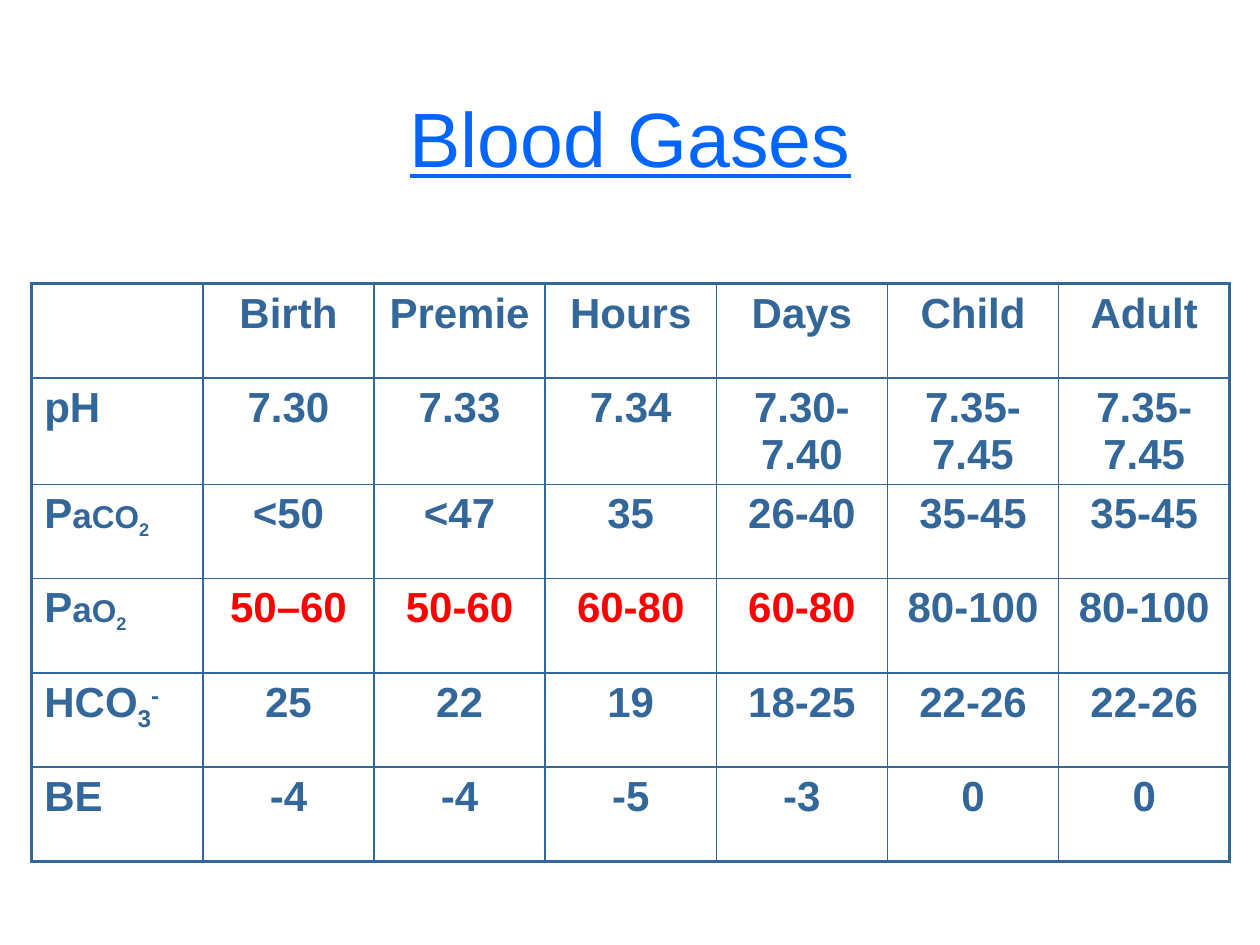
"""Builds the blood gases slide with its table of normal values by age."""
from dataclasses import dataclass

from lxml import etree
from pptx import Presentation
from pptx.dml.color import RGBColor
from pptx.enum.text import MSO_ANCHOR, PP_ALIGN
from pptx.oxml.ns import qn
from pptx.util import Cm, Pt

BOTTOM = MSO_ANCHOR.BOTTOM
CENTER, LEFT = PP_ALIGN.CENTER, PP_ALIGN.LEFT
TITLE_ONLY = 5

AGES = ["", "Birth", "Premie", "Hours", "Days", "Child", "Adult"]
GASES = [
    ([("pH", 24, 0)],
     ["7.30", "7.33", "7.34", "7.30-7.40", "7.35-7.45", "7.35-7.45"]),
    ([("P", 24, 0), ("a", 20, 0), ("CO", 18, 0), ("2", 18, -25)],
     ["<50", "<47", "35", "26-40", "35-45", "35-45"]),
    ([("P", 24, 0), ("a", 20, 0), ("O", 18, 0), ("2", 18, -25)],
     ["50–60", "50-60", "60-80", "60-80", "80-100", "80-100"]),
    ([("HCO", 24, 0), ("3", 24, -25), ("-", 24, 30)],
     ["25", "22", "19", "18-25", "22-26", "22-26"]),
    ([("BE", 24, 0)], ["-4", "-4", "-5", "-3", "0", "0"]),
]
OXYGEN_ROW = 4
LOW_OXYGEN_COLUMNS = range(1, 5)


@dataclass(frozen=True)
class Theme:
    """Colours, font and sizes of the slide."""
    font: str = "Arial"
    title: str = "0066FF"
    ink: str = "336699"
    alert: str = "FF0000"
    title_size: float = 44
    cell_size: float = 24
    outer_line: float = 2.25
    inner_line: float = 1


class SlideBuilder:
    """Holds the theme and the current slide."""

    def __init__(self, theme, slide):
        self.theme = theme
        self.slide = slide

    def style(self, paragraph, size, colour, align):
        """Formats a whole paragraph."""
        paragraph.alignment = align
        font = paragraph.font
        font.name = self.theme.font
        font.size = Pt(size)
        font.color.rgb = RGBColor.from_string(colour)
        return font

    def title(self, wording, left, top, width, height):
        """Places and fills the title placeholder."""
        heading = self.slide.shapes.title
        heading.left, heading.top = Cm(left), Cm(top)
        heading.width, heading.height = Cm(width), Cm(height)
        frame = heading.text_frame
        frame.text = wording
        frame.word_wrap = True
        frame.vertical_anchor = BOTTOM
        font = self.style(frame.paragraphs[0], self.theme.title_size,
                          self.theme.title, CENTER)
        font.underline = True

    def cell(self, cell, pieces, colour, align):
        """Writes pieces of text, each with its size and baseline shift."""
        paragraph = cell.text_frame.paragraphs[0]
        self.style(paragraph, self.theme.cell_size, colour, align).bold = True
        for wording, size, shift in pieces:
            run = paragraph.add_run()
            run.text = wording
            if size != self.theme.cell_size:
                run.font.size = Pt(size)
            if shift:
                run.font._element.set("baseline", str(shift * 1000))
        cell.fill.background()

    def borders(self, cell, outer_sides):
        """Draws the four borders, heavier on the outer sides."""
        properties = cell._tc.get_or_add_tcPr()
        for position, side in enumerate("LRTB"):
            weight = (self.theme.outer_line if side in outer_sides
                      else self.theme.inner_line)
            line = etree.Element(qn(f"a:ln{side}"), w=str(int(Pt(weight))))
            fill = etree.SubElement(line, qn("a:solidFill"))
            etree.SubElement(fill, qn("a:srgbClr"), val=self.theme.ink)
            properties.insert(position, line)

    def table(self, rows, left, top, column_width, row_height):
        """Adds the table of values with labels in the first column."""
        row_count, column_count = len(rows), len(rows[0])
        table = self.slide.shapes.add_table(
            row_count, column_count, Cm(left), Cm(top),
            Cm(column_width * column_count), Cm(row_height * row_count)).table
        table.first_row = table.horz_banding = False
        for column in table.columns:
            column.width = Cm(column_width)
        for r, row in enumerate(rows):
            table.rows[r].height = Cm(row_height)
            for c, pieces in enumerate(row):
                low = r == OXYGEN_ROW - 1 and c in LOW_OXYGEN_COLUMNS
                edges = {"L": c == 0, "R": c == column_count - 1,
                         "T": r == 0, "B": r == row_count - 1}
                cell = table.cell(r, c)
                self.cell(cell, pieces,
                          self.theme.alert if low else self.theme.ink,
                          CENTER if c else LEFT)
                self.borders(cell, [side for side in edges if edges[side]])


def main():
    """Builds and saves the slide."""
    presentation = Presentation()
    presentation.slide_width, presentation.slide_height = Cm(25.4), Cm(19.05)
    slide = presentation.slides.add_slide(
        presentation.slide_layouts[TITLE_ONLY])
    theme = Theme()
    builder = SlideBuilder(theme, slide)
    builder.title("Blood Gases", 0.64, 0.64, 24.13, 3.18)

    def plain(values):
        return [[(value, theme.cell_size, 0)] if value else []
                for value in values]

    rows = [plain(AGES)] + [[label] + plain(values) for label, values in GASES]
    builder.table(rows, 0.64, 5.72, 3.45, 1.9)
    presentation.save("out.pptx")


if __name__ == "__main__":
    main()
